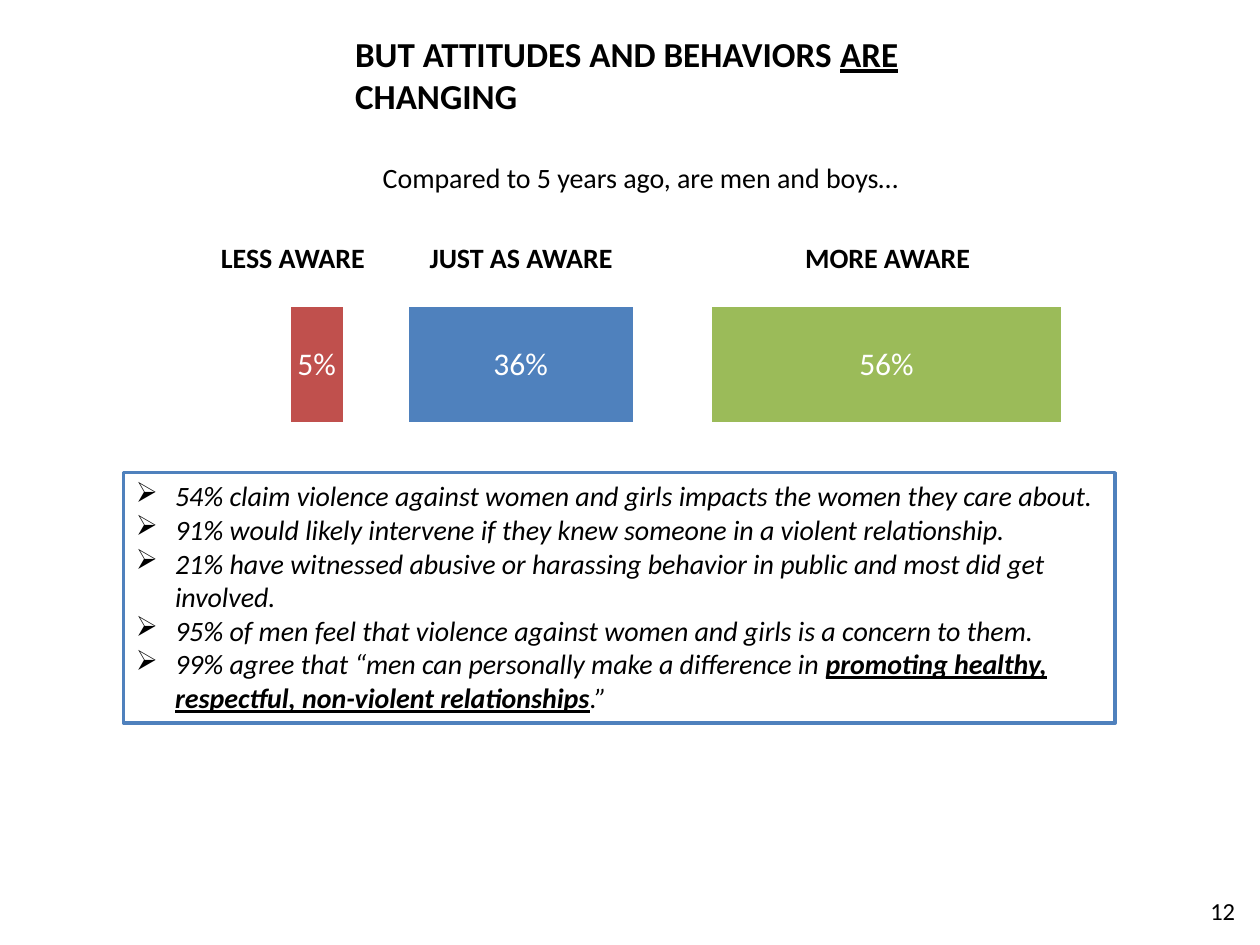
"""Build the slide on changing attitudes with three single-bar charts and a findings box."""
from dataclasses import dataclass

from lxml.etree import SubElement
from pptx import Presentation
from pptx.chart.data import CategoryChartData
from pptx.dml.color import RGBColor
from pptx.enum.chart import XL_CHART_TYPE, XL_LABEL_POSITION
from pptx.enum.shapes import MSO_SHAPE
from pptx.enum.text import MSO_ANCHOR, PP_ALIGN
from pptx.oxml import parse_xml
from pptx.oxml.ns import nsdecls, qn
from pptx.util import Cm, Pt

FONT = "Calibri"
BLACK, WHITE, BLUE = "000000", "FFFFFF", "4F81BD"
INDENT = Cm(0.79)


@dataclass
class Run:
    text: str
    bold: bool = False
    italic: bool = False
    underline: bool = False


@dataclass
class Answer:
    label: str
    label_left: float
    chart_left: float
    share: float
    color: str
    axis_max: float = 1
    reverse: bool = False


ANSWERS = [
    Answer("MORE AWARE", 15.29, 14.1, 0.56, "9BBB59"),
    Answer("JUST AS AWARE", 7.9, 7.98, 0.36, BLUE),
    Answer("LESS AWARE", 3.3, -5.89, 0.05, "C0504D", 0.6, True),
]

FINDINGS = [
    [Run("54% claim violence against women and girls impacts the women they care about.", italic=True)],
    [Run("91% would likely intervene if they knew someone in a violent relationship.", italic=True)],
    [Run("21% have witnessed abusive or harassing behavior in public and most did get involved.", italic=True)],
    [Run("95% of men feel that violence against women and girls is a concern to them.", italic=True)],
    [
        Run("99% agree that “men can personally make a difference in ", italic=True),
        Run("promoting healthy, respectful, non-violent relationships", True, True, True),
        Run(".”", italic=True),
    ],
]


def rgb(color: str) -> RGBColor:
    return RGBColor.from_string(color)


def add_runs(p, runs: list[Run], size: int) -> None:
    for run in runs:
        r = p.add_run()
        r.text = run.text
        r.font.name = FONT
        r.font.size = Pt(size)
        r.font.bold = run.bold
        r.font.italic = run.italic
        r.font.underline = run.underline
        r.font.color.rgb = rgb(BLACK)


def add_text(s, left: float, top: float, width: float, height: float,
             runs: list[Run], size: int = 16, align=PP_ALIGN.CENTER) -> None:
    tf = s.shapes.add_textbox(Cm(left), Cm(top), Cm(width), Cm(height)).text_frame
    tf.word_wrap = True
    tf.paragraphs[0].alignment = align
    add_runs(tf.paragraphs[0], runs, size)


def add_bar(s, answer: Answer) -> None:
    data = CategoryChartData(number_format="0%")
    data.categories = ["1"]
    data.add_series("Series 1", [answer.share])
    chart = s.shapes.add_chart(XL_CHART_TYPE.BAR_CLUSTERED, Cm(answer.chart_left), Cm(4.32),
                               Cm(13.06), Cm(6.05), data).chart
    chart.has_legend = False
    chart.has_title = False
    chart.font.name = FONT
    chart.font.size = Pt(18)
    chart.font.color.rgb = rgb(BLACK)
    chart.category_axis.visible = False
    axis = chart.value_axis
    axis.visible = False
    axis.has_major_gridlines = False
    axis.minimum_scale = 0
    axis.maximum_scale = answer.axis_max
    axis.reverse_order = answer.reverse

    plot = chart.plots[0]
    plot.vary_by_categories = False
    plot.gap_width = 150
    fill = plot.series[0].format.fill
    fill.solid()
    fill.fore_color.rgb = rgb(answer.color)
    plot.has_data_labels = True
    labels = plot.data_labels
    labels.show_value = True
    labels.number_format = "0%"
    labels.number_format_is_linked = False
    labels.position = XL_LABEL_POSITION.CENTER
    labels.font.name = FONT
    labels.font.size = Pt(18)
    labels.font.color.rgb = rgb(WHITE)
    set_plot_layout(chart)


def set_plot_layout(chart) -> None:
    area = chart.element.find(".//" + qn("c:plotArea"))
    for old in area.findall(qn("c:layout")):
        area.remove(old)
    settings = {"layoutTarget": "inner", "xMode": "edge", "yMode": "edge",
                "x": 0.02, "y": 0.02, "w": 0.96, "h": 0.96}
    items = "".join(f'<c:{name} val="{value}"/>' for name, value in settings.items())
    area.insert(0, parse_xml(
        f'<c:layout {nsdecls("c")}><c:manualLayout>{items}</c:manualLayout></c:layout>'))


def add_findings(s) -> None:
    sp = s.shapes.add_shape(MSO_SHAPE.RECTANGLE, Cm(2.49), Cm(9.53), Cm(19.99), Cm(5.05))
    sp.shadow.inherit = False
    sp.fill.solid()
    sp.fill.fore_color.rgb = rgb(WHITE)
    sp.line.color.rgb = rgb(BLUE)
    sp.line.width = Pt(2)
    tf = sp.text_frame
    tf.word_wrap = True
    tf.vertical_anchor = MSO_ANCHOR.TOP
    for i, runs in enumerate(FINDINGS):
        p = tf.add_paragraph() if i else tf.paragraphs[0]
        p.alignment = PP_ALIGN.LEFT
        pPr = p._p.get_or_add_pPr()
        pPr.set("marL", str(INDENT))
        pPr.set("indent", str(-INDENT))
        SubElement(pPr, qn("a:buChar"), char="➢")
        add_runs(p, runs, 16)


def main() -> None:
    prs = Presentation()
    prs.slide_width, prs.slide_height = Cm(25.4), Cm(19.05)
    s = prs.slides.add_slide(prs.slide_layouts[6])
    for answer in ANSWERS:
        add_bar(s, answer)
    add_text(s, 2.31, 3.12, 21.21, 0.94, [Run("Compared to 5 years ago, are men and boys…")])
    add_findings(s)
    title = [Run("BUT ATTITUDES AND BEHAVIORS ", bold=True),
             Run("ARE", bold=True, underline=True),
             Run(" CHANGING", bold=True)]
    add_text(s, 6.91, 0.53, 13.21, 1.96, title, 20, PP_ALIGN.LEFT)
    for answer in ANSWERS:
        add_text(s, answer.label_left, 4.72, 5.21, 0.94, [Run(answer.label, bold=True)])
    add_text(s, 23.9, 17.93, 1.5, 1.12, [Run("12")], 14)
    prs.save("out.pptx")


if __name__ == "__main__":
    main()
